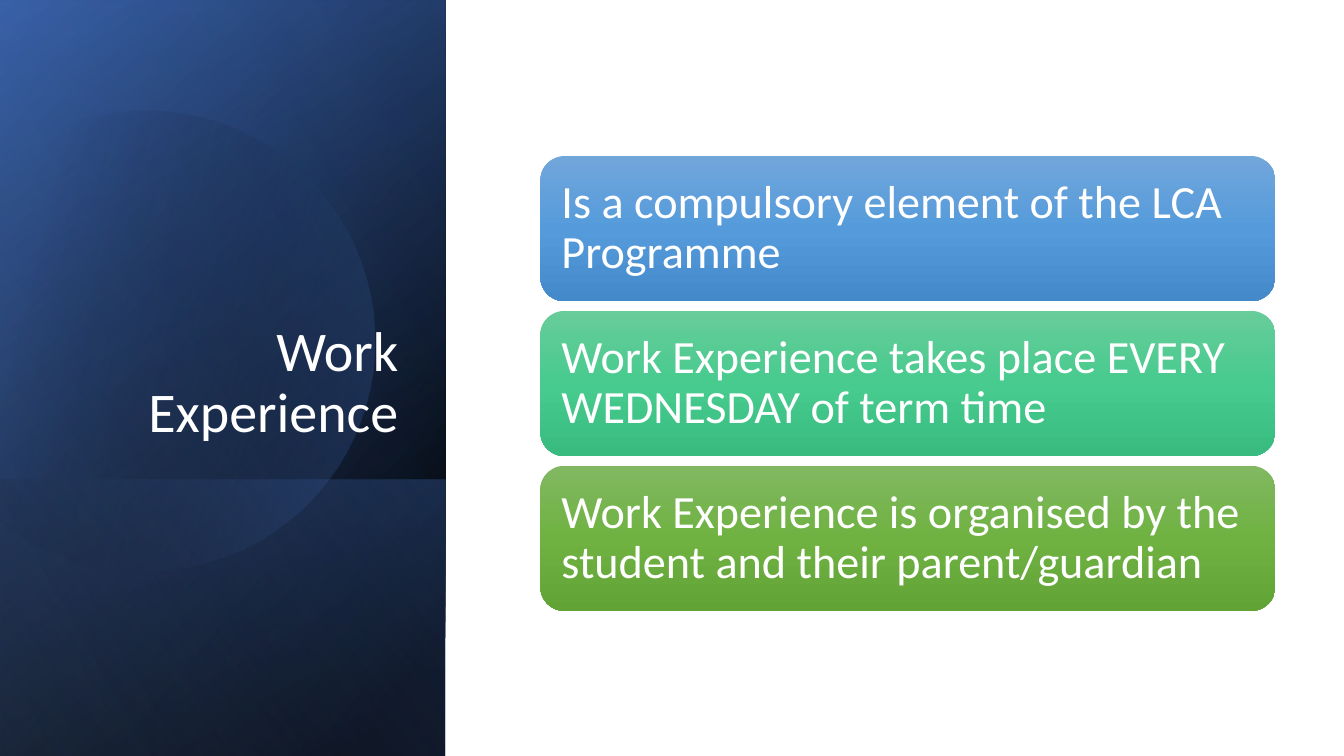
import math
from pptx import Presentation
from pptx import util as u
from pptx.dml.color import RGBColor
from pptx.enum import shapes, text
from pptx.oxml import parse_xml
from pptx.oxml.ns import nsdecls, qn


def gradient(sp, stops, angle):
    sp.shadow.inherit = False
    sp.line.fill.background()
    sp.fill.background()
    gs = "".join(
        f'<a:gs pos="{pos * 1000}"><a:srgbClr val="{color}">'
        f'<a:alpha val="{alpha * 1000}"/></a:srgbClr></a:gs>'
        for pos, color, alpha in stops)
    fill = parse_xml(
        f'<a:gradFill {nsdecls("a")} rotWithShape="1"><a:gsLst>{gs}</a:gsLst>'
        f'<a:lin ang="{angle * 60000}" scaled="0"/></a:gradFill>')
    spPr = sp.element.spPr
    spPr.replace(spPr.find(qn("a:noFill")), fill)


def write(sp, words, size, align, anchor):
    tf = sp.text_frame
    tf.word_wrap = True
    tf.vertical_anchor = anchor
    p = tf.paragraphs[0]
    p.alignment = align
    p.line_spacing = 0.9
    r = p.add_run()
    r.text = words
    r.font.size = u.Pt(size)
    r.font.name = "Calibri"
    r.font.color.rgb = RGBColor.from_string("FFFFFF")


prs = Presentation()
prs.slide_width = u.Pt(960)
prs.slide_height = u.Pt(540)
s = prs.slides.add_slide(prs.slide_layouts[6])

panels = [
    (-110.9, 110.9, 540, [(8, "000000", 100), (100, "2F5597", 100)], 50),
    (-110.9, 111.3, 540, [(0, "000000", 0), (99, "4472C4", 46)], 30),
    (60.5, 282.4, 197.3, [(2, "4472C4", 29), (100, "000000", 30)], 130),
    None,
    (-110.9, 110.9, 540, [(0, "000000", 0), (99, "8FAADC", 11)], 120),
]
disc_start = (1.49, 1.1)
disc_curves = [
    [(2.46, 1.12), (3.35, 1.77), (3.63, 2.75)],
    [(3.98, 3.97), (3.28, 5.23), (2.07, 5.58)],
    [(1.31, 5.8), (0.53, 5.61), (-0.03, 5.14)],
    [(-0.15, 5.03)],
    [(-0.15, 1.75)],
    [(0, 1.61)],
    [(0.23, 1.42), (0.5, 1.28), (0.8, 1.19)],
    [(1.03, 1.13), (1.26, 1.1), (1.49, 1.1)],
]
disc_turn = -16.1
cx, cy = 1.585, 3.345
cos, sin = math.cos(math.radians(-disc_turn)), math.sin(math.radians(-disc_turn))

for panel in panels:
    if panel:
        left, top, width, stops, angle = panel
        sp = s.shapes.add_shape(shapes.MSO_SHAPE.RECTANGLE, u.Pt(left), u.Pt(top),
                                u.Pt(width), u.Pt(318.2))
        sp.rotation = 90
        sp.element.spPr.find(qn("a:xfrm")).set("flipH", "1")
        gradient(sp, stops, angle)
        continue
    outline = [disc_start]
    for curve in disc_curves:
        if len(curve) == 1:
            outline += curve
            continue
        a, (b, c, d) = outline[-1], curve
        for t in [i / 20 for i in range(1, 21)]:
            k = 1 - t
            outline.append(tuple(
                k**3 * a[n] + 3 * k * k * t * b[n] + 3 * k * t * t * c[n] + t**3 * d[n]
                for n in (0, 1)))
    points = [(u.Pt(72 * (cx + (x - cx) * cos - (y - cy) * sin)),
               u.Pt(72 * (cy + (x - cx) * sin + (y - cy) * cos))) for x, y in outline]
    fb = s.shapes.build_freeform(*points[0])
    fb.add_line_segments(points[1:], close=True)
    sp = fb.convert_to_shape()
    sp.rotation = disc_turn
    gradient(sp, [(29, "000000", 0), (100, "4472C4", 43)], 30)

title = s.shapes.add_textbox(u.Pt(46), u.Pt(132.5), u.Pt(245.5), u.Pt(188.6))
write(title, "Work Experience", 40, text.PP_ALIGN.RIGHT, text.MSO_ANCHOR.BOTTOM)

cards = [
    ("Is a compulsory element of the LCA Programme", "71A6DB", "559BDB", "448ACA"),
    ("Work Experience takes place EVERY WEDNESDAY of term time",
     "67CC9A", "47CB8E", "39BB7F"),
    ("Work Experience is organised by the student and their parent/guardian",
     "81B861", "6FB242", "62A336"),
]
for i, (words, light, middle, dark) in enumerate(cards):
    sp = s.shapes.add_shape(shapes.MSO_SHAPE.ROUNDED_RECTANGLE, u.Pt(386),
                            u.Pt(111.5 + 110.6 * i), u.Pt(525), u.Pt(103.7))
    gradient(sp, [(0, light, 100), (50, middle, 100), (100, dark, 100)], 90)
    tf = sp.text_frame
    tf.margin_left = tf.margin_right = tf.margin_top = tf.margin_bottom = u.Pt(10)
    write(sp, words, 33, text.PP_ALIGN.LEFT, text.MSO_ANCHOR.MIDDLE)

prs.save("out.pptx")
